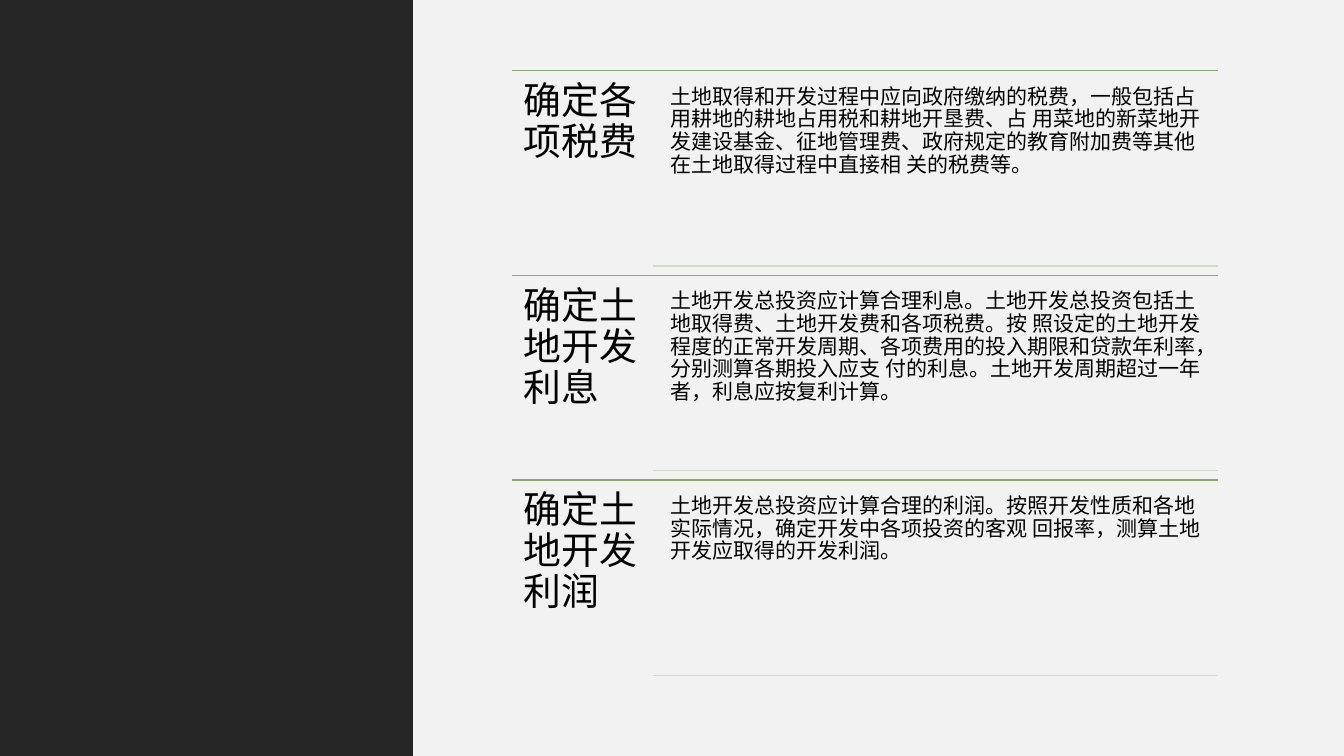
from dataclasses import dataclass

from lxml import etree
from pptx import Presentation
from pptx.dml.color import RGBColor
from pptx.enum.shapes import MSO_CONNECTOR, MSO_SHAPE
from pptx.enum.text import MSO_ANCHOR, PP_ALIGN
from pptx.oxml.ns import qn
from pptx.slide import Slide
from pptx.util import Pt

STRAIGHT = MSO_CONNECTOR.STRAIGHT
RECTANGLE = MSO_SHAPE.RECTANGLE

LIGHT_GREY = RGBColor(0xF2, 0xF2, 0xF2)
CHARCOAL = RGBColor(0x26, 0x26, 0x26)
GREEN = RGBColor(0x8B, 0xAA, 0x69)
PALE_GREEN = RGBColor(0xD0, 0xDA, 0xC7)
BLACK = RGBColor(0, 0, 0)

FONT = "Arial"
SLIDE_WIDTH, SLIDE_HEIGHT = 960, 540
SIDEBAR_WIDTH = 295

HEADING_LEFT, HEADING_WIDTH = 365.8, 100.8
DETAIL_LEFT, DETAIL_WIDTH, DETAIL_HEIGHT = 474.5, 395.3, 132.5
DETAIL_OFFSET = 6.6
RULE_LEFT, RULE_RIGHT = 466.6, 869.8
FIRST_ROW_TOP, ROW_HEIGHT = 50.4, 146.2
DETAIL_RULE_OFFSET = DETAIL_OFFSET + DETAIL_HEIGHT + 0.5


@dataclass(frozen=True)
class Step:
    heading: str
    detail: str


@dataclass(frozen=True)
class Box:
    left: float
    top: float
    width: float
    height: float

    def lengths(self) -> tuple[Pt, Pt, Pt, Pt]:
        return Pt(self.left), Pt(self.top), Pt(self.width), Pt(self.height)


@dataclass(frozen=True)
class TextStyle:
    size: float
    inset: float
    space_after: float


HEADING_STYLE = TextStyle(size=27, inset=8.1, space_after=9.45)
DETAIL_STYLE = TextStyle(size=15, inset=4.5, space_after=5.25)

STEPS = [
    Step(
        "确定各项税费",
        "土地取得和开发过程中应向政府缴纳的税费，一般包括占用耕地的耕地占用税和耕地开垦费、占 "
        "用菜地的新菜地开发建设基金、征地管理费、政府规定的教育附加费等其他在土地取得过程中直接相 "
        "关的税费等。",
    ),
    Step(
        "确定土地开发利息",
        "土地开发总投资应计算合理利息。土地开发总投资包括土地取得费、土地开发费和各项税费。按 "
        "照设定的土地开发程度的正常开发周期、各项费用的投入期限和贷款年利率，分别测算各期投入应支 "
        "付的利息。土地开发周期超过一年者，利息应按复利计算。",
    ),
    Step(
        "确定土地开发利润",
        "土地开发总投资应计算合理的利润。按照开发性质和各地实际情况，确定开发中各项投资的客观 "
        "回报率，测算土地开发应取得的开发利润。",
    ),
]


def set_attributes(target: object, values: dict[str, object]) -> None:
    for name, value in values.items():
        setattr(target, name, value)


def add_panel(slide: Slide, box: Box, color: RGBColor) -> None:
    panel = slide.shapes.add_shape(RECTANGLE, *box.lengths())
    panel.shadow.inherit = False
    panel.fill.solid()
    panel.fill.fore_color.rgb = color
    panel.line.fill.background()


def add_rule(slide: Slide, left: float, top: float, color: RGBColor) -> None:
    """Draw a horizontal line from left to the common right edge."""
    rule = slide.shapes.add_connector(
        STRAIGHT, Pt(left), Pt(top), Pt(RULE_RIGHT), Pt(top)
    )
    rule.line.color.rgb = color
    rule.line.width = Pt(1)
    etree.SubElement(rule._element.spPr, qn("a:effectLst"))


def add_text(slide: Slide, box: Box, text: str, style: TextStyle) -> None:
    frame = slide.shapes.add_textbox(*box.lengths()).text_frame
    inset = Pt(style.inset)
    set_attributes(frame, {
        "word_wrap": True,
        "vertical_anchor": MSO_ANCHOR.TOP,
        "margin_left": inset,
        "margin_top": inset,
        "margin_right": inset,
        "margin_bottom": inset,
    })
    paragraph = frame.paragraphs[0]
    set_attributes(paragraph, {
        "alignment": PP_ALIGN.LEFT,
        "line_spacing": 0.9,
        "space_after": Pt(style.space_after),
    })
    run = paragraph.add_run()
    run.text = text
    set_attributes(run.font, {"name": FONT, "size": Pt(style.size)})
    run.font.color.rgb = BLACK


def add_step(slide: Slide, step: Step, top: float) -> None:
    add_rule(slide, HEADING_LEFT, top, GREEN)
    heading_box = Box(HEADING_LEFT, top, HEADING_WIDTH, ROW_HEIGHT)
    add_text(slide, heading_box, step.heading, HEADING_STYLE)
    detail_box = Box(DETAIL_LEFT, top + DETAIL_OFFSET, DETAIL_WIDTH, DETAIL_HEIGHT)
    add_text(slide, detail_box, step.detail, DETAIL_STYLE)
    add_rule(slide, RULE_LEFT, top + DETAIL_RULE_OFFSET, PALE_GREEN)


def main() -> None:
    presentation = Presentation()
    presentation.slide_width = Pt(SLIDE_WIDTH)
    presentation.slide_height = Pt(SLIDE_HEIGHT)
    slide = presentation.slides.add_slide(presentation.slide_layouts[6])

    content_width = SLIDE_WIDTH - SIDEBAR_WIDTH
    add_panel(slide, Box(SIDEBAR_WIDTH, 0, content_width, SLIDE_HEIGHT), LIGHT_GREY)
    add_panel(slide, Box(0, 0, SIDEBAR_WIDTH, SLIDE_HEIGHT), CHARCOAL)
    for row, step in enumerate(STEPS):
        add_step(slide, step, FIRST_ROW_TOP + row * ROW_HEIGHT)

    presentation.save("out.pptx")


if __name__ == "__main__":
    main()
